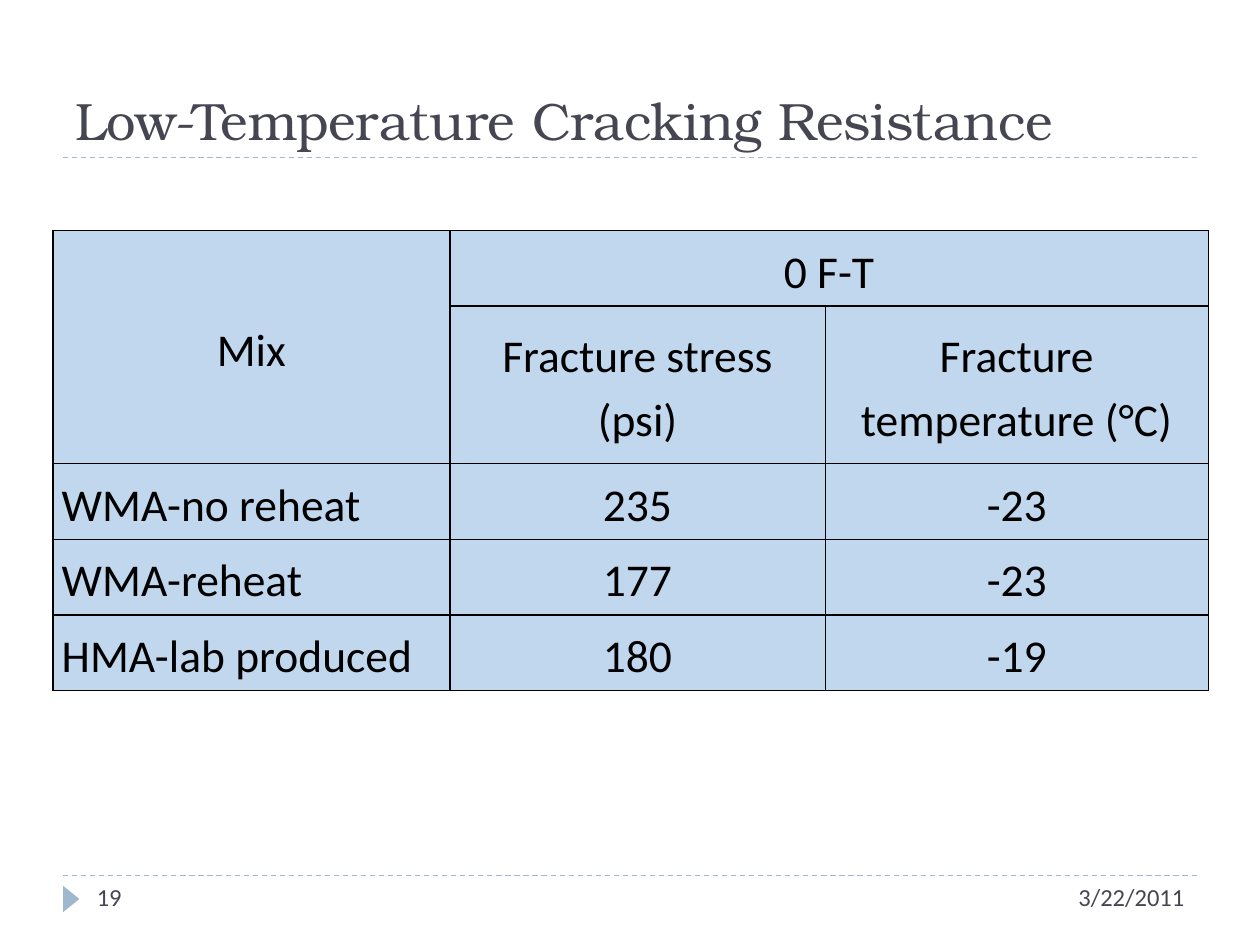
import pptx
import pptx.dml.color
import pptx.enum.dml
import pptx.enum.shapes
import pptx.enum.text
import pptx.oxml
import pptx.oxml.ns
import pptx.util
from lxml import etree

INK, ACCENT, BLACK, CELL_BLUE = "464653", "9FB8CD", "000000", "C0D7EE"
ALIGN = pptx.enum.text.PP_ALIGN
ANCHOR = pptx.enum.text.MSO_ANCHOR
inches = pptx.util.Inches

MARGIN, CONTENT_WIDTH = 0.5, 9
COLUMNS = [3.15, 2.98, 3.04]
ROW, TALL_ROW = 0.6, 1.25
RESULTS = [
    ["Mix", "0 F-T", ""],
    ["", "Fracture stress (psi)", "Fracture temperature (°C)"],
    ["WMA-no reheat", "235", "-23"],
    ["WMA-reheat", "177", "-23"],
    ["HMA-lab produced", "180", "-19"],
]


def color(hex_code):
    """Turn a hex string into a colour."""
    return pptx.dml.color.RGBColor.from_string(hex_code)


def write(frame, words, size, font, ink, align=ALIGN.LEFT):
    """Put one styled run into the first paragraph and return the paragraph."""
    paragraph = frame.paragraphs[0]
    paragraph.alignment = align
    run = paragraph.add_run()
    run.text = words
    run.font.size = pptx.util.Pt(size)
    run.font.name = font
    run.font.color.rgb = color(ink)
    return paragraph


def add_label(slide, box, words, size, font, align=ALIGN.LEFT, anchor=ANCHOR.TOP):
    """Add a wrapped text box that fills the given box."""
    frame = slide.shapes.add_textbox(*map(inches, box)).text_frame
    frame.word_wrap = True
    frame.vertical_anchor = anchor
    write(frame, words, size, font, INK, align)


def add_rule(slide, left, top, width):
    """Draw a dashed horizontal rule."""
    rule = slide.shapes.add_connector(
        pptx.enum.shapes.MSO_CONNECTOR.STRAIGHT,
        *map(inches, (left, top, left + width, top)))
    rule.line.color.rgb = color(ACCENT)
    rule.line.width = pptx.util.Pt(0.75)
    rule.line.dash_style = pptx.enum.dml.MSO_LINE.DASH
    properties = rule._element.spPr
    etree.SubElement(properties, pptx.oxml.ns.qn("a:effectLst"))


def add_heading(slide, box, words):
    """Set the title at the foot of its box, above a rule."""
    left, top, width, height = box
    add_rule(slide, left, top + height, width)
    add_label(slide, box, words, 30, "TeX Gyre Bonum", anchor=ANCHOR.BOTTOM)


def add_footer(slide, box, number, date):
    """Set a rule, a pointer, the page number and the date."""
    left, top, width, height = box
    add_rule(slide, left, top, width)
    pointer = slide.shapes.add_shape(
        pptx.enum.shapes.MSO_SHAPE.ISOSCELES_TRIANGLE,
        *map(inches, (left - 0.04, top + 0.12, 0.21, 0.13)))
    pointer.rotation = 90
    pointer.shadow.inherit = False
    pointer.fill.solid()
    pointer.fill.fore_color.rgb = color(ACCENT)
    pointer.line.fill.background()
    add_label(slide, (left + 0.17, top, 2.17, height), number, 14, "Calibri")
    add_label(slide, (left + width - 2.5, top, 2.5, height), date, 14, "Calibri", ALIGN.RIGHT)


def add_borders(cell):
    """Outline a cell with a thin black line on all sides."""
    properties = cell._tc.get_or_add_tcPr()
    for index, side in enumerate("LRTB"):
        properties.insert(index, pptx.oxml.parse_xml(
            f'<a:ln{side} {pptx.oxml.ns.nsdecls("a")} w="{pptx.util.Pt(1)}">'
            f'<a:solidFill><a:srgbClr val="{BLACK}"/></a:solidFill></a:ln{side}>'))


def style_cell(cell, words, align):
    """Fill, outline and write one table cell."""
    cell.fill.solid()
    cell.fill.fore_color.rgb = color(CELL_BLUE)
    add_borders(cell)
    cell.vertical_anchor = ANCHOR.MIDDLE
    cell.margin_left = cell.margin_right = inches(0.07)
    cell.margin_top = cell.margin_bottom = 0
    if words:
        paragraph = write(cell.text_frame, words, 26, "Calibri", BLACK, align)
        paragraph.line_spacing = 1.15


def add_results(slide, left, top):
    """Build the fracture table with its two-level header."""
    heights = [TALL_ROW if row == 1 else ROW for row in range(len(RESULTS))]
    table = slide.shapes.add_table(
        len(heights), len(COLUMNS),
        *map(inches, (left, top, sum(COLUMNS), sum(heights)))).table
    table.first_row = table.horz_banding = False
    for column, width in zip(table.columns, COLUMNS):
        column.width = inches(width)
    for row, height in zip(table.rows, heights):
        row.height = inches(height)
    table.cell(0, 0).merge(table.cell(1, 0))
    table.cell(0, 1).merge(table.cell(0, 2))
    for r, entries in enumerate(RESULTS):
        for c, words in enumerate(entries):
            is_mix_name = c == 0 and r > 1
            style_cell(table.cell(r, c), words, ALIGN.LEFT if is_mix_name else ALIGN.CENTER)


def main():
    """Build and save the slide."""
    deck = pptx.Presentation()
    deck.slide_width, deck.slide_height = inches(10), inches(7.5)
    slide = deck.slides.add_slide(deck.slide_layouts[6])
    add_heading(slide, (MARGIN, 0.17, CONTENT_WIDTH, 1.08), "Low-Temperature Cracking Resistance")
    add_results(slide, 0.42, 1.83)
    add_footer(slide, (MARGIN, 6.95, CONTENT_WIDTH, 0.4), "19", "3/22/2011")
    deck.save("out.pptx")


if __name__ == "__main__":
    main()
